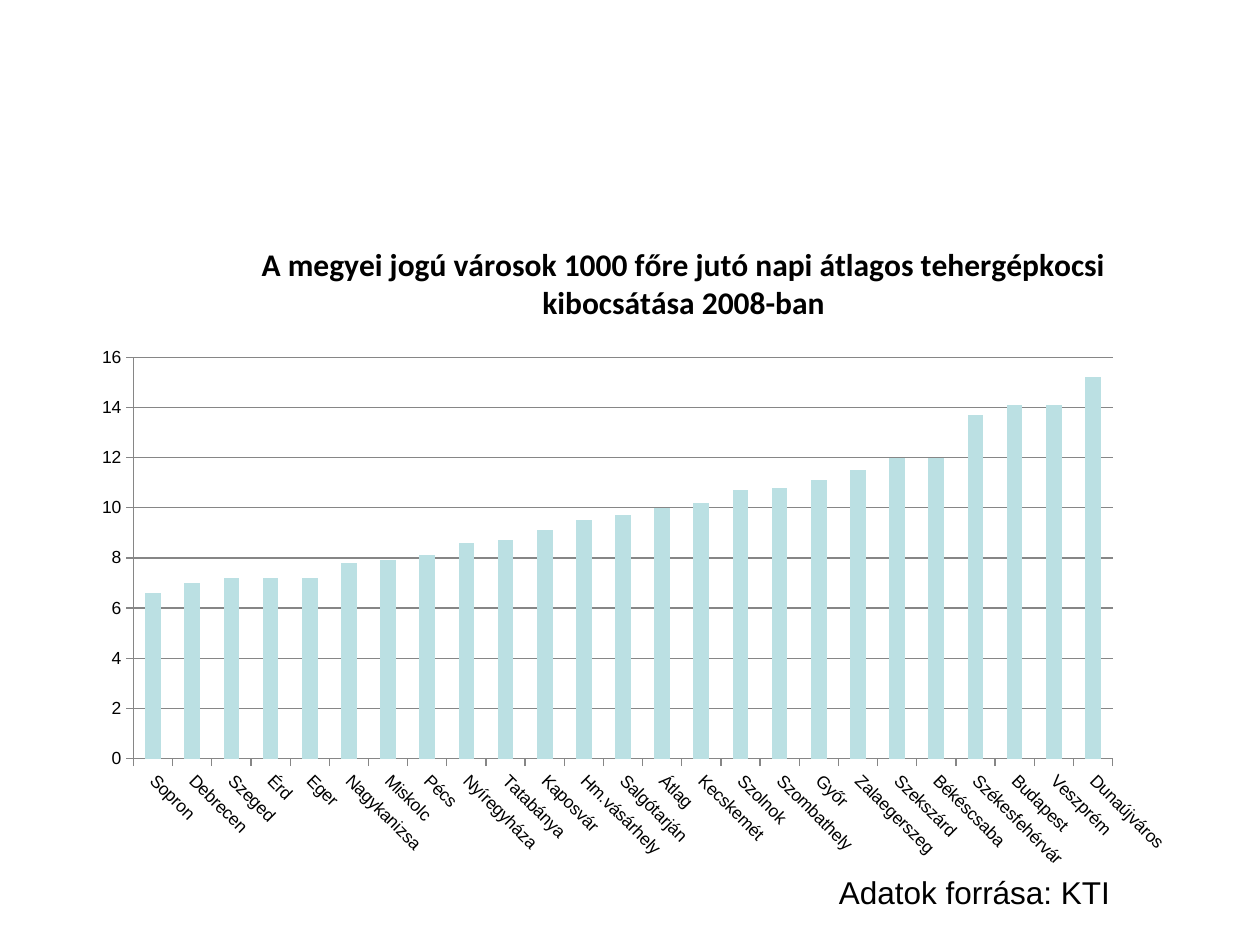
from dataclasses import dataclass

from lxml.etree import SubElement
from pptx import Presentation
from pptx.chart.data import CategoryChartData
from pptx.dml.color import RGBColor
from pptx.enum.chart import XL_CHART_TYPE, XL_TICK_MARK
from pptx.enum.text import MSO_AUTO_SIZE
from pptx.oxml.ns import qn
from pptx.util import Cm, Pt


@dataclass(frozen=True)
class Theme:
    ink: RGBColor = RGBColor(0, 0, 0)
    grid: RGBColor = RGBColor(0x86, 0x86, 0x86)
    bar: RGBColor = RGBColor(0xBB, 0xE0, 0xE3)
    body_font: str = "Arial"
    title_font: str = "Calibri"
    label_size: Pt = Pt(10)
    text_size: Pt = Pt(18)


theme = Theme()


def write(frame, text, font=theme.body_font, size=theme.text_size, bold=False):
    run = frame.paragraphs[0].add_run()
    run.text = text
    run.font.name = font
    run.font.size = size
    run.font.bold = bold
    run.font.color.rgb = theme.ink


def place(parent, **fractions):
    layout = parent.find(qn("c:layout"))
    if layout is None:
        layout = SubElement(parent, qn("c:layout"))
        parent.remove(layout)
        parent.insert(1 if parent.tag == qn("c:title") else 0, layout)
    manual = SubElement(layout, qn("c:manualLayout"))
    for tag, value in fractions.items():
        SubElement(manual, qn(f"c:{tag}")).set("val", str(value))


emissions = {
    "Sopron": 6.6, "Debrecen": 7, "Szeged": 7.2, "Érd": 7.2, "Eger": 7.2,
    "Nagykanizsa": 7.8, "Miskolc": 7.9, "Pécs": 8.1, "Nyíregyháza": 8.6,
    "Tatabánya": 8.7, "Kaposvár": 9.1, "Hm.vásárhely": 9.5,
    "Salgótarján": 9.7, "Átlag": 10, "Kecskemét": 10.2, "Szolnok": 10.7,
    "Szombathely": 10.8, "Győr": 11.1, "Zalaegerszeg": 11.5,
    "Szekszárd": 12, "Békéscsaba": 12, "Székesfehérvár": 13.7,
    "Budapest": 14.1, "Veszprém": 14.1, "Dunaújváros": 15.2,
}

deck = Presentation()
deck.slide_width, deck.slide_height = Cm(25.4), Cm(19.05)
slide = deck.slides.add_slide(deck.slide_layouts[6])

city_data = CategoryChartData()
city_data.categories = list(emissions)
city_data.add_series("Series 1", list(emissions.values()))
chart = slide.shapes.add_chart(
    XL_CHART_TYPE.COLUMN_CLUSTERED,
    Cm(1.57), Cm(4.37), Cm(22.43), Cm(13.49), city_data,
).chart
chart.has_legend = False
chart.font.name = theme.body_font
chart.font.size = theme.label_size
chart.font.color.rgb = theme.ink

write(
    chart.chart_title.text_frame,
    "A megyei jogú városok 1000 főre jutó napi átlagos tehergépkocsi kibocsátása 2008-ban",
    font=theme.title_font, bold=True,
)
chart.chart_title.include_in_layout = False
title_part = chart.chart_title.text_frame._txBody.getparent().getparent()
place(title_part, xMode="edge", yMode="edge", x=0.16, y=0.03)
place(
    title_part.getparent().find(qn("c:plotArea")),
    layoutTarget="inner", xMode="edge", yMode="edge",
    x=0.05, y=0.21, w=0.88, h=0.6,
)

columns = chart.plots[0]
columns.gap_width = 150
columns.vary_by_categories = False
fill = columns.series[0].format.fill
fill.solid()
fill.fore_color.rgb = theme.bar

cities, rate = chart.category_axis, chart.value_axis
rate.minimum_scale, rate.maximum_scale, rate.major_unit = 0, 16, 2
rate.tick_labels.number_format = "0"
rate.tick_labels.number_format_is_linked = False
rate.has_major_gridlines = True
for axis in (cities, rate):
    axis.major_tick_mark = XL_TICK_MARK.OUTSIDE
    axis.tick_labels.font.size = theme.label_size
for rule in (cities, rate, rate.major_gridlines):
    rule.format.line.color.rgb = theme.grid
    rule.format.line.width = Pt(0.75)
city_labels = cities.tick_labels.font._element.getparent().getparent().getparent()
city_labels.find(qn("a:bodyPr")).set("rot", "2700000")

credit = slide.shapes.add_textbox(Cm(16.66), Cm(17.48), Cm(6.05), Cm(1.02)).text_frame
credit.word_wrap = False
credit.auto_size = MSO_AUTO_SIZE.SHAPE_TO_FIT_TEXT
write(credit, "Adatok forrása: KTI")

deck.save("out.pptx")
